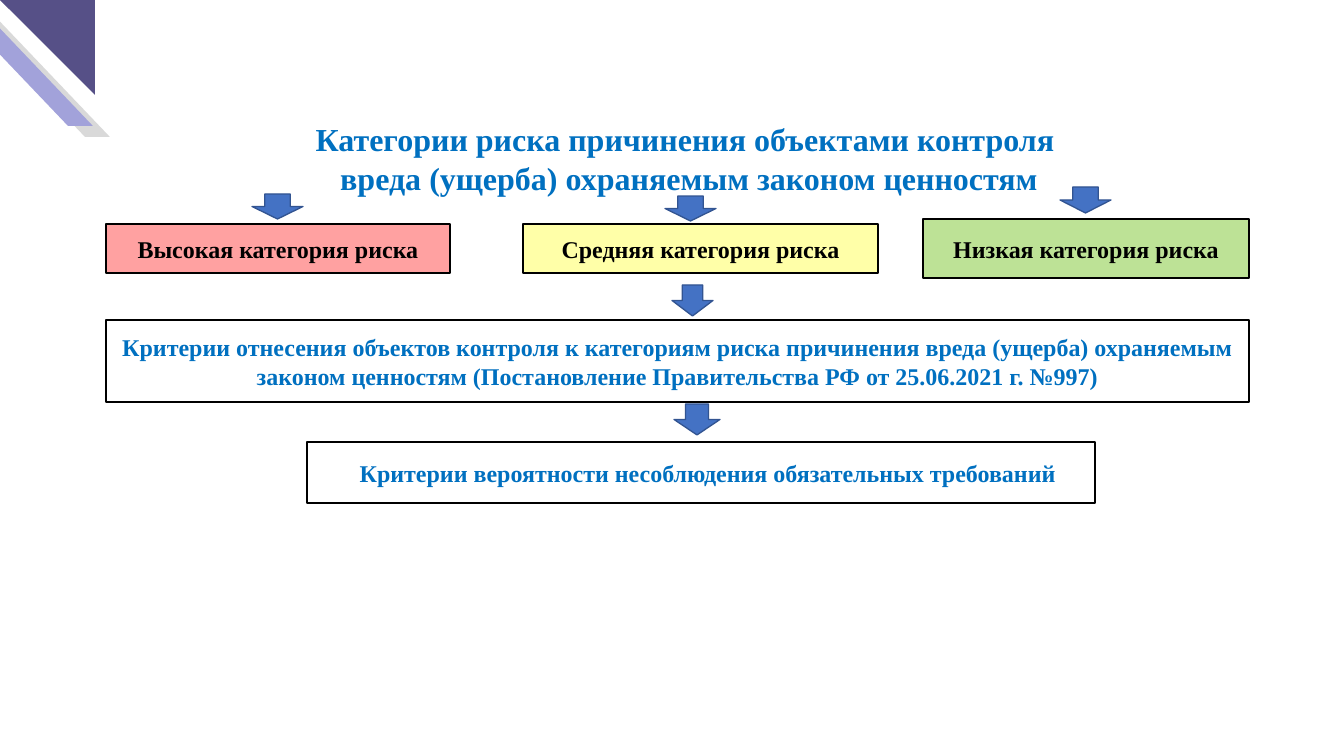
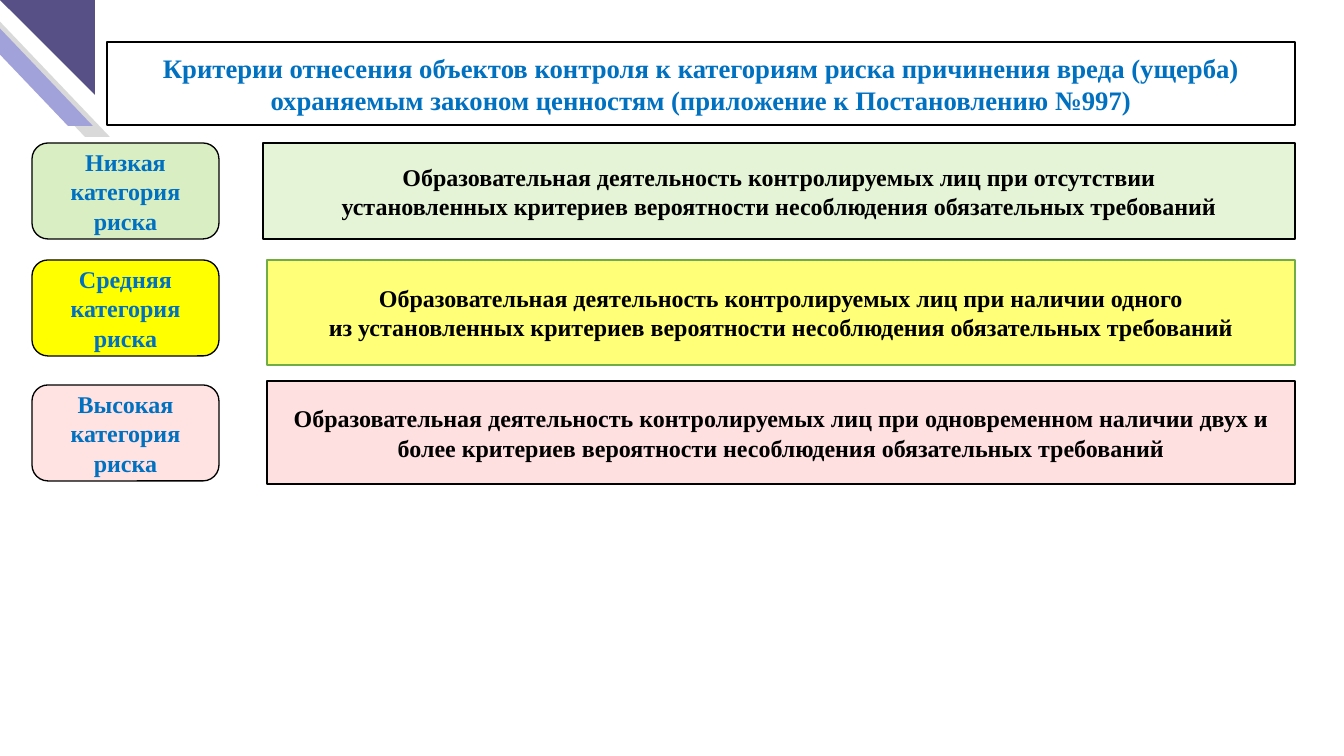
import pptx
import pptx.util
import pptx.dml.color
import pptx.enum.shapes
import pptx.enum.text
import pptx.oxml

PX = 9525
FONT = "Times New Roman"
KIND = pptx.enum.shapes.MSO_SHAPE
HEX = {
    "white": "FFFFFF", "black": "000000", "blue": "0070C0",
    "arrow": "4472C4", "edge": "325491", "moss": "70AD47",
    "red": "FF0000", "green": "92D050", "yellow": "FFFF00",
    "grey": "D9D9D9", "lilac": "A2A2DA", "plum": "565087",
}

# kind, box, fill, flips, adjustment
CORNER = [
    (KIND.PARALLELOGRAM, (-35, 11, 145, 126), "grey", ["flipH"], 0.953),
    (KIND.PARALLELOGRAM, (-52, 0, 145, 126), "lilac", ["flipH"], 0.953),
    (KIND.RIGHT_TRIANGLE, (0, 0, 95, 95), "plum", ["flipH", "flipV"], None),
]

TITLE = ("Категории риска причинения объектами контроля \n"
         "вреда (ущерба) охраняемым законом ценностям")
# text, box, fill, opacity in percent
LEVELS = [
    ("Высокая категория риска", (106, 224, 344, 49), "red", 37),
    ("Средняя категория риска", (523, 224, 355, 49), "yellow", 34),
    ("Низкая категория риска", (923, 219, 326, 59), "green", 60),
]
RULES = ("Критерии отнесения объектов контроля к категориям риска причинения "
         "вреда (ущерба) охраняемым законом ценностям "
         "(Постановление Правительства РФ от 25.06.2021 г. №997)")
ODDS = "Критерии вероятности несоблюдения обязательных требований"
ARROWS = [
    (252, 194, 51, 25), (665, 196, 51, 25), (1060, 187, 51, 26),
    (672, 285, 41, 31), (674, 404, 46, 31),
]

HEAD = ("Критерии отнесения объектов контроля к категориям риска причинения "
        "вреда (ущерба) охраняемым законом ценностям "
        "(приложение к Постановлению №997)")
# label, its top, colour, its opacity, text, (left, top, height), opacity, line
ROWS = [
    ("Низкая категория риска", 143, "green", 34,
     "Образовательная деятельность контролируемых лиц при отсутствии\n"
     "установленных критериев вероятности несоблюдения обязательных требований",
     (263, 143, 96), 23, "black"),
    ("Средняя категория риска", 260, "yellow", 100,
     "Образовательная деятельность контролируемых лиц при наличии одного\n"
     "из установленных критериев вероятности несоблюдения обязательных требований",
     (267, 260, 105), 53, "moss"),
    ("Высокая категория риска", 385, "red", 11,
     "Образовательная деятельность контролируемых лиц при одновременном "
     "наличии двух и более критериев вероятности несоблюдения "
     "обязательных требований",
     (267, 381, 103), 12, "black"),
]
RIGHT = 1295


def rgb(name):
    return pptx.dml.color.RGBColor.from_string(HEX[name])


def scale(box):
    return [n * PX for n in box]


def draw(slide, kind, box, fill, line=None, alpha=100):
    shape = slide.shapes.add_shape(kind, *scale(box))
    shape.shadow.inherit = False
    shape.fill.solid()
    shape.fill.fore_color.rgb = rgb(fill)
    if alpha < 100:
        tint = shape.fill._xPr.find(".//" + pptx.oxml.ns.qn("a:srgbClr"))
        pptx.oxml.xmlchemy.OxmlElement("a:alpha")
        mark = pptx.oxml.xmlchemy.OxmlElement("a:alpha")
        mark.set("val", str(alpha * 1000))
        tint.append(mark)
    if line:
        shape.line.color.rgb = rgb(line)
        shape.line.width = pptx.util.Pt(1)
    else:
        shape.line.fill.background()
    return shape


def write(shape, text, color="black", size=18):
    """Put centred bold text into a shape."""
    frame = shape.text_frame
    frame.text = text
    frame.word_wrap = True
    frame.vertical_anchor = pptx.enum.text.MSO_ANCHOR.MIDDLE
    for para in frame.paragraphs:
        para.alignment = pptx.enum.text.PP_ALIGN.CENTER
        para.line_spacing = pptx.util.Pt(round(size * 1.22, 1))
        for run in para.runs:
            run.font.name = FONT
            run.font.size = pptx.util.Pt(size)
            run.font.bold = True
            run.font.color.rgb = rgb(color)


def start(deck):
    """Add a blank slide with the corner pattern."""
    slide = deck.slides.add_slide(deck.slide_layouts[6])
    for kind, box, fill, flips, bend in CORNER:
        shape = draw(slide, kind, box, fill)
        for flip in flips:
            shape.element.spPr.xfrm.set(flip, "1")
        if bend:
            shape.adjustments[0] = bend
    return slide


def levels(deck):
    slide = start(deck)
    title = slide.shapes.add_textbox(*scale((59, 114, 1260, 88)))
    write(title, TITLE, "blue", 24)
    for text, box, fill, alpha in LEVELS:
        write(draw(slide, KIND.RECTANGLE, box, fill, "black", alpha), text)
    for box in ARROWS:
        draw(slide, KIND.DOWN_ARROW, box, "arrow", "edge")
    rules = draw(slide, KIND.RECTANGLE, (106, 320, 1143, 82), "white", "black")
    write(rules, RULES, "blue")
    odds = draw(slide, KIND.RECTANGLE, (307, 442, 788, 61), "white", "black")
    write(odds, ODDS, "blue")
    odds.text_frame.margin_left = 23 * PX


def criteria(deck):
    slide = start(deck)
    head = draw(slide, KIND.RECTANGLE, (107, 42, RIGHT - 107, 83), "white", "black")
    write(head, HEAD, "blue", 20)
    for label, y, fill, tone, text, (left, top, high), alpha, line in ROWS:
        tag = draw(slide, KIND.ROUNDED_RECTANGLE, (32, y, 187, 96),
                   fill, "black", tone)
        write(tag, label, "blue")
        box = (left, top, RIGHT - left, high)
        write(draw(slide, KIND.RECTANGLE, box, fill, line, alpha), text)


def main():
    deck = pptx.Presentation()
    deck.slide_width, deck.slide_height = scale((1344, 756))
    levels(deck)
    criteria(deck)
    deck.save("out.pptx")


if __name__ == "__main__":
    main()
